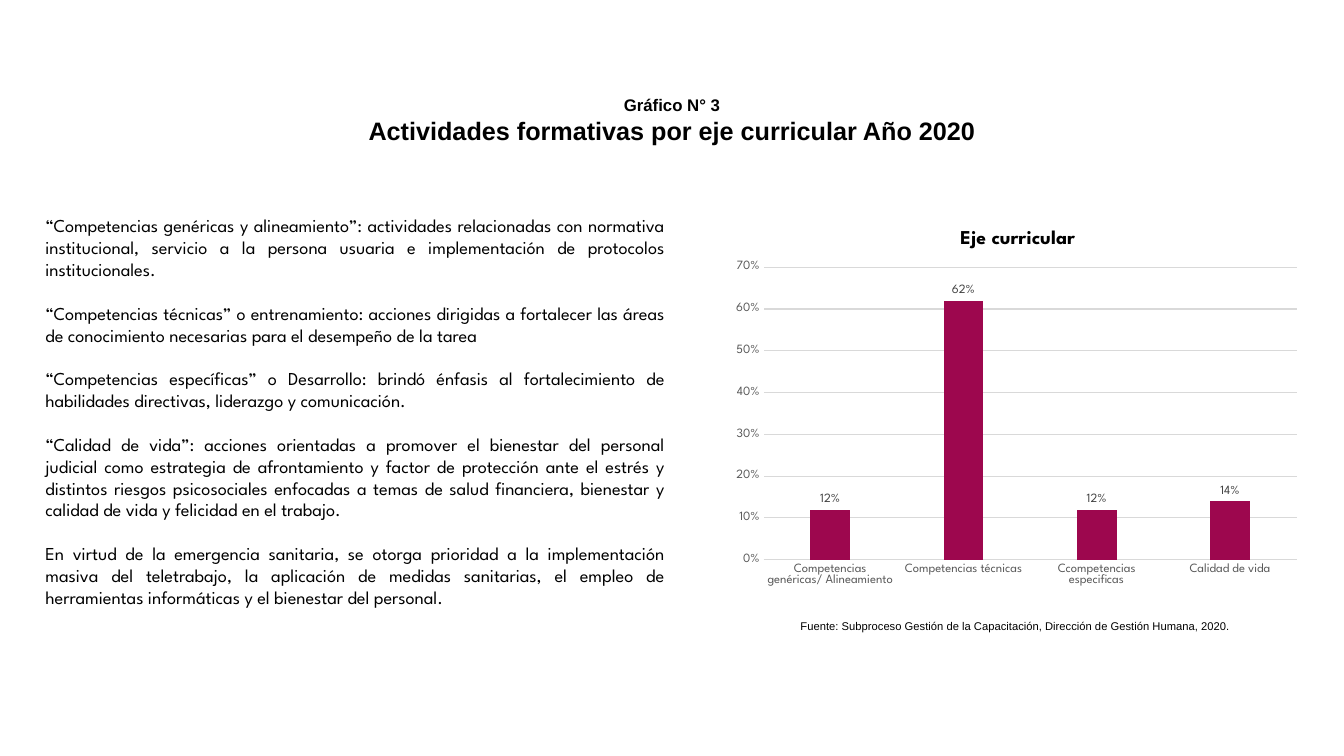
from pptx import Presentation
from pptx.chart.data import CategoryChartData
from pptx.dml.color import RGBColor
from pptx.enum import chart as charts, text
from pptx.oxml import parse_xml
from pptx.oxml.ns import nsdecls
from pptx.util import Cm, Pt

SANS = "Arial"
SPARTAN = "League Spartan"
BLACK, GREY, DARK, PALE, WINE = "000000", "595959", "404040", "D9D9D9", "9D074E"

AXES = [
    "“Competencias genéricas y alineamiento”: actividades relacionadas con normativa "
    "institucional, servicio a la persona usuaria e implementación de protocolos "
    "institucionales.",
    "“Competencias técnicas” o entrenamiento: acciones dirigidas a fortalecer las áreas "
    "de conocimiento necesarias para el desempeño de la tarea",
    "“Competencias específicas” o Desarrollo: brindó énfasis al fortalecimiento de "
    "habilidades directivas, liderazgo y comunicación.",
    "“Calidad de vida”: acciones orientadas a promover el bienestar del personal judicial "
    "como estrategia de afrontamiento y factor de protección ante el estrés y distintos "
    "riesgos psicosociales enfocadas a temas de salud financiera, bienestar y calidad de "
    "vida y felicidad en el trabajo.",
    "En virtud de la emergencia sanitaria, se otorga prioridad a la implementación "
    "masiva del teletrabajo, la aplicación de medidas sanitarias, el empleo de "
    "herramientas informáticas y el bienestar del personal.",
]
SHARES = {
    "Competencias genéricas/ Alineamiento": 0.12,
    "Competencias técnicas": 0.62,
    "Ccompetencias especificas": 0.12,
    "Calidad de vida": 0.14,
}


def colour(value):
    return RGBColor.from_string(value)


def assign(target, values):
    for name, value in values.items():
        setattr(target, name, value)


def style_font(font, face, size, shade, bold=False):
    assign(font, {"name": face, "size": Pt(size), "bold": bold})
    font.color.rgb = colour(shade)


def place(box, left, top, width, height):
    assign(box, {"left": Cm(left), "top": Cm(top),
                 "width": Cm(width), "height": Cm(height)})


def write(box, lines, face, align, gap=0, bold=False):
    """Fill a box with (wording, size) lines, spaced by gap points."""
    frame = box.text_frame
    assign(frame, {"word_wrap": True, "auto_size": text.MSO_AUTO_SIZE.NONE,
                   "vertical_anchor": text.MSO_ANCHOR.TOP})
    for index, (wording, size) in enumerate(lines):
        para = frame.add_paragraph() if index else frame.paragraphs[0]
        assign(para, {"alignment": align, "space_before": Pt(gap if index else 0)})
        span = para.add_run()
        span.text = wording
        style_font(span.font, face, size, BLACK, bold)


def remove_bullets(box):
    for para in box.text_frame.paragraphs:
        properties = para._p.get_or_add_pPr()
        properties.set("marL", "0")
        properties.set("indent", "0")
        properties.append(parse_xml(f"<a:buNone {nsdecls('a')}/>"))


def set_layout(element, before, **fractions):
    """Fix a chart part's position, in fractions of the chart."""
    for old in element.findall("{*}layout"):
        element.remove(old)
    modes = "".join(f'<c:{side}Mode val="edge"/>' for side in "xy")
    sizes = "".join(f'<c:{key} val="{value}"/>' for key, value in fractions.items())
    target = '<c:layoutTarget val="inner"/>' if "w" in fractions else ""
    layout = parse_xml(f"<c:layout {nsdecls('c')}><c:manualLayout>{target}{modes}{sizes}"
                       "</c:manualLayout></c:layout>")
    element.insert(before, layout)


def style_line(line, shade):
    line.color.rgb = colour(shade)
    line.width = Pt(0.75)


def style_axis(axis):
    assign(axis, {"major_tick_mark": charts.XL_TICK_MARK.NONE,
                  "minor_tick_mark": charts.XL_TICK_MARK.NONE})
    style_font(axis.tick_labels.font, SPARTAN, 9, GREY)


def add_share_chart(page):
    data = CategoryChartData(number_format="0%")
    data.categories = list(SHARES)
    data.add_series("Eje curricular", list(SHARES.values()))
    chart = page.shapes.add_chart(charts.XL_CHART_TYPE.COLUMN_CLUSTERED, Cm(18.21),
                                  Cm(5.28), Cm(14.76), Cm(9.7), data).chart
    chart.has_legend = False
    style_font(chart.font, SPARTAN, 10, BLACK)

    title = chart.chart_title
    title.text_frame.text = "Eje curricular"
    style_font(title.text_frame.paragraphs[0].runs[0].font, SPARTAN, 14, BLACK, True)
    title.include_in_layout = False
    set_layout(title._element, 1, x=0.4, y=0.04)
    set_layout(chart._chartSpace.chart.plotArea, 0, x=0.07, y=0.15, w=0.91, h=0.76)

    style_axis(chart.category_axis)
    style_line(chart.category_axis.format.line, PALE)
    shares = chart.value_axis
    style_axis(shares)
    assign(shares, {"minimum_scale": 0, "maximum_scale": 0.7, "major_unit": 0.1,
                    "has_major_gridlines": True})
    shares.format.line.fill.background()
    style_line(shares.major_gridlines.format.line, PALE)
    assign(shares.tick_labels, {"number_format": "0%", "number_format_is_linked": False})

    plot = chart.plots[0]
    assign(plot, {"gap_width": 235, "overlap": -27, "vary_by_categories": False,
                  "has_data_labels": True})
    assign(plot.data_labels, {"show_value": True, "number_format": "0%",
                              "number_format_is_linked": False,
                              "position": charts.XL_LABEL_POSITION.OUTSIDE_END})
    style_font(plot.data_labels.font, SPARTAN, 9, DARK)
    fill = plot.series[0].format.fill
    fill.solid()
    fill.fore_color.rgb = colour(WINE)


def main():
    deck = Presentation()
    assign(deck, {"slide_width": Cm(33.87), "slide_height": Cm(19.05)})
    page = deck.slides.add_slide(deck.slide_layouts[1])

    heading = page.shapes.title
    place(heading, 1.96, 2.26, 29.95, 1.55)
    write(heading, [("Gráfico N° 3", 12),
                    ("Actividades formativas por eje curricular Año 2020", 18)],
          SANS, text.PP_ALIGN.CENTER, bold=True)

    body = page.placeholders[1]
    place(body, 0.89, 5.28, 16.1, 11.94)
    write(body, [(axis, 13) for axis in AXES], SPARTAN, text.PP_ALIGN.JUSTIFY, gap=15.6)
    remove_bullets(body)

    add_share_chart(page)

    source = page.shapes.add_textbox(Cm(17.12), Cm(15.47), Cm(16.94), Cm(0.61))
    write(source, [("Fuente: Subproceso Gestión de la Capacitación, "
                    "Dirección de Gestión Humana, 2020.", 8)],
          SANS, text.PP_ALIGN.CENTER)

    deck.save("out.pptx")


if __name__ == "__main__":
    main()
